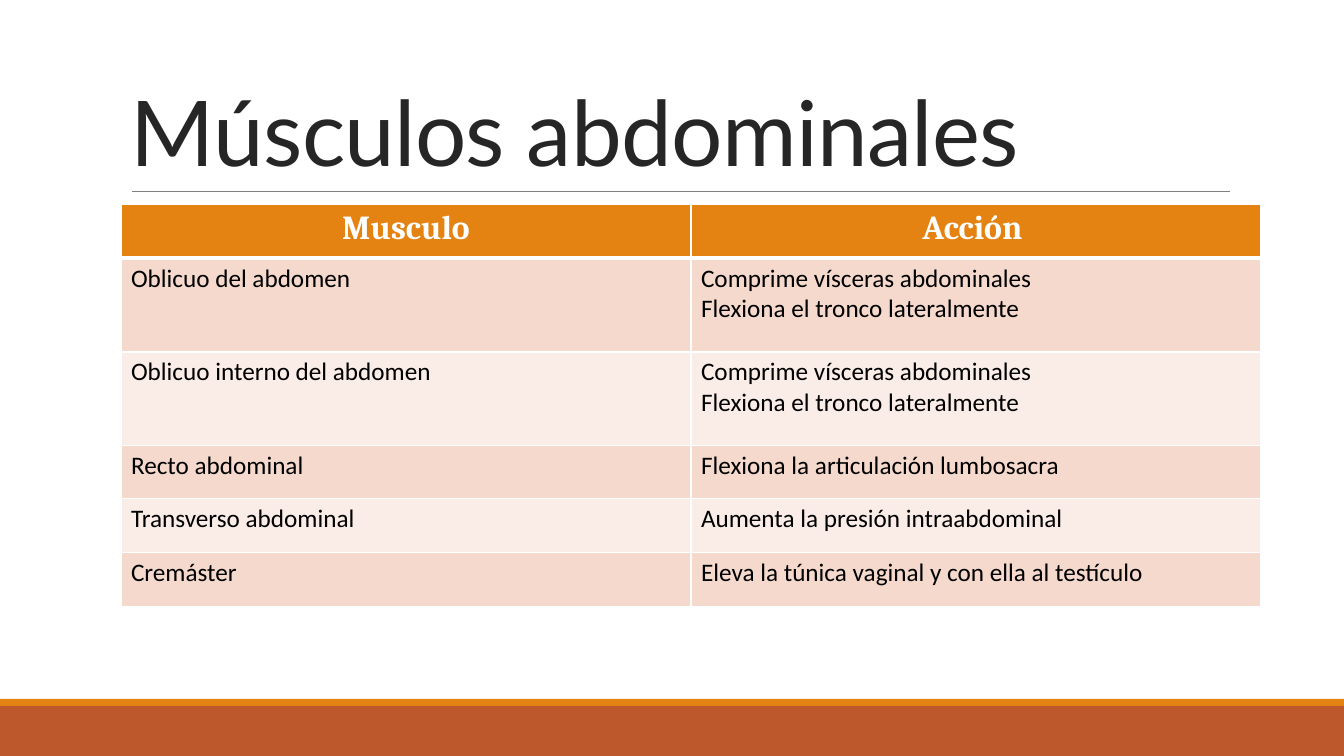
import pptx
import pptx.util
import pptx.dml.color
import pptx.enum.shapes
import pptx.enum.text
import pptx.oxml
import pptx.oxml.ns
import lxml.etree

EMU_PER_PX = 914400 / 100.8
PAGE_WIDTH, PAGE_HEIGHT = 1344, 756
COLORS = {
    "page": "FFFFFF",
    "rust": "BD582C",
    "orange": "E48312",
    "rule": "808080",
    "title": "262626",
    "text": "000000",
    "border": "FFFFFF",
    "band_dark": "F5D9CC",
    "band_light": "FAEDE7",
}
HEADINGS = ("Musculo", "Acción ")
FLANK_ACTIONS = "Comprime vísceras abdominales\nFlexiona el tronco lateralmente"
MUSCLES = [
    ("Oblicuo del abdomen", FLANK_ACTIONS),
    ("Oblicuo interno del abdomen", FLANK_ACTIONS),
    ("Recto abdominal", "Flexiona la articulación lumbosacra"),
    ("Transverso abdominal", "Aumenta la presión intraabdominal"),
    ("Cremáster", "Eleva la túnica vaginal y con ella al testículo"),
]
ROW_HEIGHTS = (54, 94, 94, 53, 54, 54)


def px(length):
    return pptx.util.Emu(round(length * EMU_PER_PX))


def color(name):
    return pptx.dml.color.RGBColor.from_string(COLORS[name])


def format_runs(para, font_name, size, color_name, bold=False):
    for span in para.runs:
        span.font.name = font_name
        span.font.size = pptx.util.Pt(size)
        span.font.bold = bold
        span.font.color.rgb = color(color_name)


def add_band(page, left, top, width, height, color_name):
    band = page.shapes.add_shape(
        pptx.enum.shapes.MSO_SHAPE.RECTANGLE, px(left), px(top), px(width), px(height))
    band.shadow.inherit = False
    band.fill.solid()
    band.fill.fore_color.rgb = color(color_name)
    band.line.fill.background()


def add_footer(page, left, top, width, height):
    stripe = 7
    add_band(page, left, top + stripe, width, height - stripe, "rust")
    add_band(page, left, top, width, stripe, "orange")


def add_title(page, left, top, width, height):
    rule_left, rule_top = left + 11, top + height + 1
    rule = page.shapes.add_connector(
        pptx.enum.shapes.MSO_CONNECTOR.STRAIGHT,
        px(rule_left), px(rule_top), px(left + width), px(rule_top))
    rule.line.color.rgb = color("rule")
    rule.line.width = pptx.util.Pt(0.5)
    lxml.etree.SubElement(rule.element.spPr, pptx.oxml.ns.qn("a:effectLst"))

    box = page.shapes.add_textbox(px(left), px(top), px(width), px(height))
    frame = box.text_frame
    frame.text = "Músculos abdominales"
    frame.word_wrap = True
    frame.vertical_anchor = pptx.enum.text.MSO_ANCHOR.BOTTOM
    para = frame.paragraphs[0]
    para.line_spacing = 0.85
    format_runs(para, "Lato", 64.8, "title")
    para.runs[0].font._element.set("spc", "-50")


def set_borders(cell, bottom_points, top_points):
    widths = {"lnL": 1, "lnR": 1, "lnT": top_points, "lnB": bottom_points}
    properties = cell._tc.get_or_add_tcPr()
    for position, (side, points) in enumerate(widths.items()):
        border = pptx.oxml.parse_xml(
            f'<a:{side} {pptx.oxml.ns.nsdecls("a")} w="{pptx.util.Pt(points)}">'
            f'<a:solidFill><a:srgbClr val="{COLORS["border"]}"/></a:solidFill></a:{side}>')
        properties.insert(position, border)


def add_muscle_table(page, left, top, width, height):
    rows = [HEADINGS] + MUSCLES
    table = page.shapes.add_table(
        len(rows), len(HEADINGS), px(left), px(top), px(width), px(height)).table
    for column in table.columns:
        column.width = px(width / len(HEADINGS))
    for row_index, texts in enumerate(rows):
        table.rows[row_index].height = px(ROW_HEIGHTS[row_index])
        is_header = row_index == 0
        fill = "orange" if is_header else ("band_light", "band_dark")[row_index % 2]
        for column_index, text in enumerate(texts):
            cell = table.cell(row_index, column_index)
            cell.text_frame.text = text
            cell.fill.solid()
            cell.fill.fore_color.rgb = color(fill)
            set_borders(cell, 3 if is_header else 1, 3 if row_index == 1 else 1)
            for para in cell.text_frame.paragraphs:
                if is_header:
                    para.alignment = pptx.enum.text.PP_ALIGN.CENTER
                    format_runs(para, "Cambria", 24, "border", True)
                else:
                    format_runs(para, "Calibri", 18, "text")


def main():
    deck = pptx.Presentation()
    deck.slide_width, deck.slide_height = px(PAGE_WIDTH), px(PAGE_HEIGHT)
    page = deck.slides.add_slide(deck.slide_layouts[6])
    page.background.fill.solid()
    page.background.fill.fore_color.rgb = color("page")
    add_footer(page, 0, 699, PAGE_WIDTH, PAGE_HEIGHT - 699)
    add_title(page, 121, 30, 1109, 160)
    add_muscle_table(page, 121, 204, 1140, sum(ROW_HEIGHTS))
    deck.save("out.pptx")


if __name__ == "__main__":
    main()
